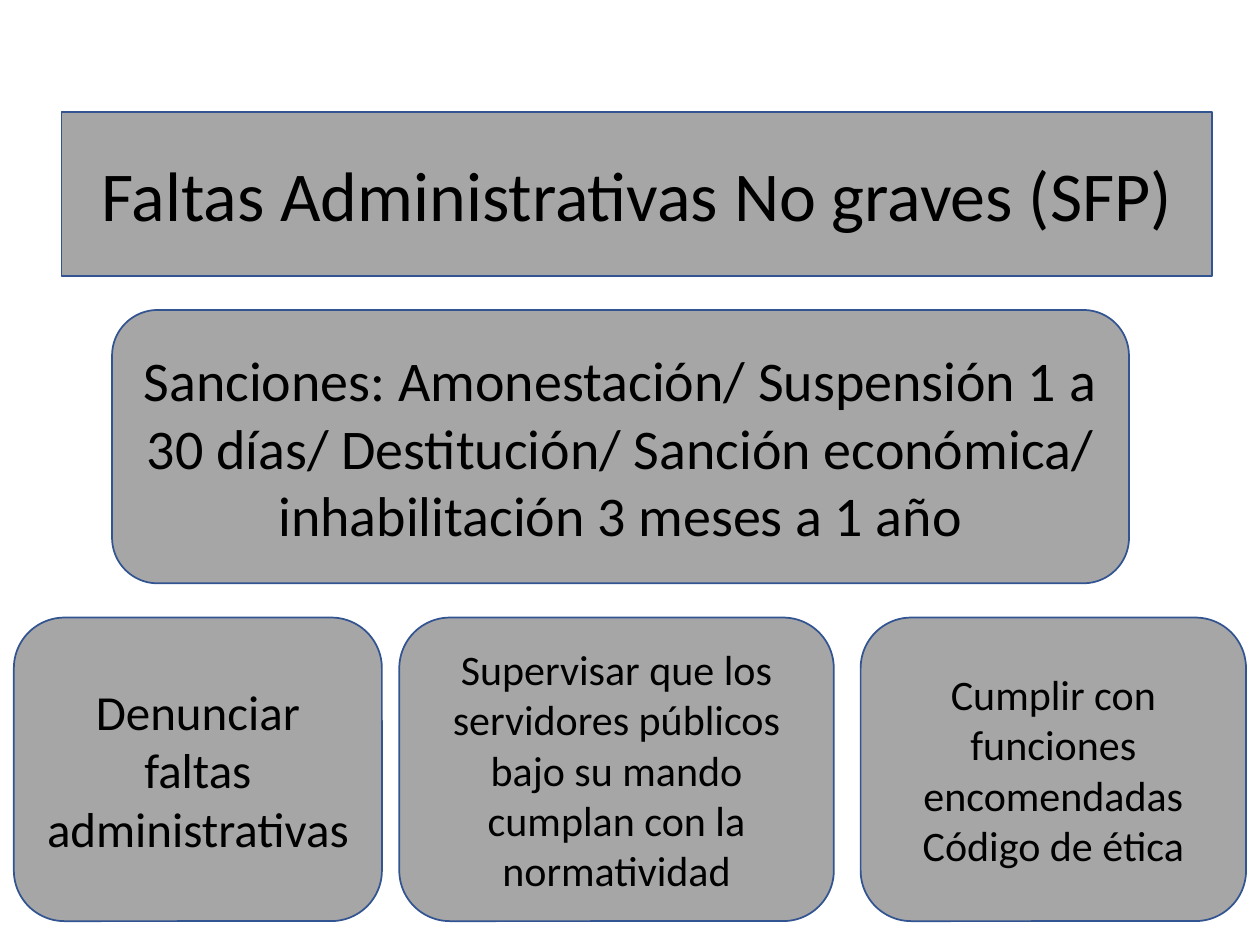
from dataclasses import dataclass

from lxml import etree
from pptx import Presentation
from pptx.dml.color import RGBColor
from pptx.enum.shapes import MSO_SHAPE
from pptx.enum.text import MSO_ANCHOR, MSO_AUTO_SIZE, PP_ALIGN
from pptx.oxml.ns import qn
from pptx.util import Cm, Pt

ROUNDED = MSO_SHAPE.ROUNDED_RECTANGLE
MIDDLE = MSO_ANCHOR.MIDDLE
NO_AUTOFIT = MSO_AUTO_SIZE.NONE
CENTER = PP_ALIGN.CENTER
TITLE_ONLY = 5


@dataclass(frozen=True)
class Theme:
    font: str = "Calibri"
    fill: RGBColor = RGBColor(0xA6, 0xA6, 0xA6)
    outline: RGBColor = RGBColor(0x32, 0x54, 0x91)
    text: RGBColor = RGBColor(0, 0, 0)
    outline_width: Pt = Pt(1)
    title_size: Pt = Pt(40)
    sanctions_size: Pt = Pt(32)
    short_duty_size: Pt = Pt(28)
    long_duty_size: Pt = Pt(24)


THEME = Theme()

DUTY_TOP, DUTY_HEIGHT = 12.45, 6.12
# left and width in cm, type size, paragraphs
DUTIES = [
    (0.28, 7.42, THEME.short_duty_size, ["Denunciar faltas administrativas"]),
    (8.05, 8.76, THEME.long_duty_size,
     ["Supervisar que los servidores públicos bajo su mando cumplan con la normatividad"]),
    (17.35, 7.77, THEME.long_duty_size,
     ["Cumplir con funciones encomendadas", "Código de ética"]),
]


def format_panel(panel, paragraphs, size):
    """Give a panel its grey fill, outline and centred text."""
    panel.fill.solid()
    panel.fill.fore_color.rgb = THEME.fill
    panel.line.color.rgb = THEME.outline
    panel.line.width = THEME.outline_width

    frame = panel.text_frame
    frame.text = "\n".join(paragraphs)
    frame.word_wrap = True
    frame.auto_size = NO_AUTOFIT
    frame.vertical_anchor = MIDDLE
    for paragraph in frame.paragraphs:
        paragraph.alignment = CENTER
        paragraph.font.name = THEME.font
        paragraph.font.size = size
        paragraph.font.color.rgb = THEME.text


def place_title(slide, text, left, top, width, height):
    """Turn the title placeholder into a rounded panel."""
    title = slide.shapes.title
    title.left, title.top = Cm(left), Cm(top)
    title.width, title.height = Cm(width), Cm(height)
    geometry = etree.SubElement(title.element.spPr, qn("a:prstGeom"), prst="roundRect")
    etree.SubElement(geometry, qn("a:avLst"))
    format_panel(title, [text], THEME.title_size)


def add_panel(slide, paragraphs, size, left, top, width, height):
    panel = slide.shapes.add_shape(ROUNDED, Cm(left), Cm(top), Cm(width), Cm(height))
    panel.shadow.inherit = False
    format_panel(panel, paragraphs, size)


def main():
    prs = Presentation()
    prs.slide_width, prs.slide_height = Cm(25.4), Cm(19.05)
    slide = prs.slides.add_slide(prs.slide_layouts[TITLE_ONLY])

    # Heading
    place_title(slide, "Faltas Administrativas No graves (SFP)", 1.24, 2.26, 23.19, 3.3)

    # Sanctions
    sanctions = ("Sanciones: Amonestación/ Suspensión 1 a 30 días/ Destitución/ "
                 "Sanción económica/ inhabilitación 3 meses a 1 año")
    add_panel(slide, [sanctions], THEME.sanctions_size, 2.26, 6.25, 20.5, 5.51)

    # Row of duties
    for left, width, size, paragraphs in DUTIES:
        add_panel(slide, paragraphs, size, left, DUTY_TOP, width, DUTY_HEIGHT)

    prs.save("out.pptx")


if __name__ == "__main__":
    main()
